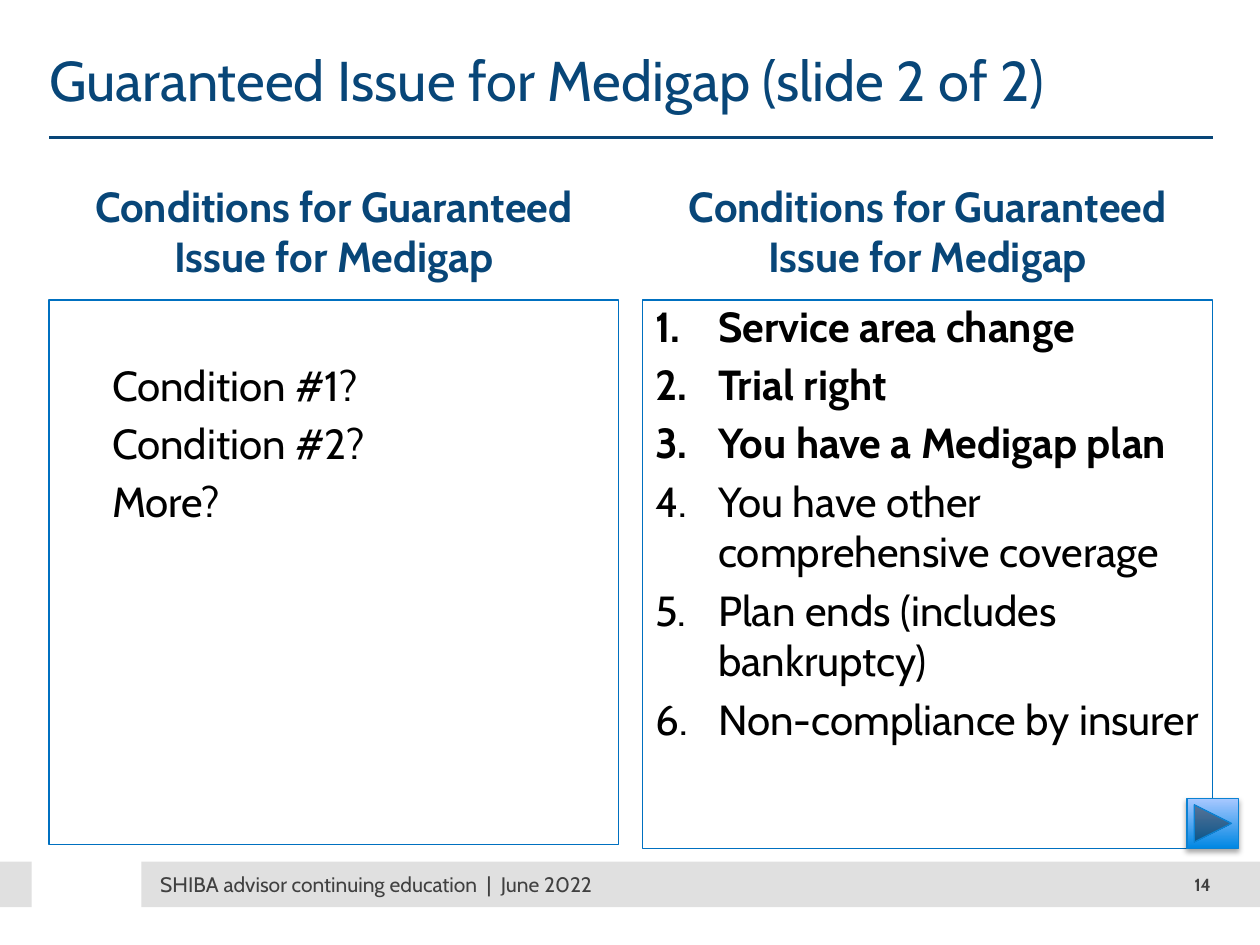
from lxml import etree
from pptx import Presentation
from pptx.dml.color import RGBColor
from pptx.enum.shapes import MSO_CONNECTOR, MSO_SHAPE
from pptx.enum.text import MSO_ANCHOR, PP_ALIGN
from pptx.oxml.ns import qn
from pptx.util import Cm, Pt

RECT = MSO_SHAPE.RECTANGLE
NEXT = MSO_SHAPE.ACTION_BUTTON_FORWARD_OR_NEXT
LINE = MSO_CONNECTOR.STRAIGHT
TOP, MIDDLE = MSO_ANCHOR.TOP, MSO_ANCHOR.MIDDLE
LEFT, CENTER, RIGHT = PP_ALIGN.LEFT, PP_ALIGN.CENTER, PP_ALIGN.RIGHT

FONT = "Cabin"
NAVY, BLUE, BLACK, GREY, PALE = "084678", "0070C0", "000000", "404040", "E0E0E0"
EDGE, GAP = 0.99, 4.6  # side margin in cm, paragraph gap in points
INDENT = Cm(1.27)


def color(code):
    return RGBColor.from_string(code)


def style(para, size, code, bold=False, align=LEFT):
    para.alignment = align
    font = para.font
    font.name, font.size, font.bold = FONT, Pt(size), bold
    font.color.rgb = color(code)


def add_box(slide, x, y, w, h, kind=RECT):
    shape = slide.shapes.add_shape(kind, Cm(x), Cm(y), Cm(w), Cm(h))
    shape.shadow.inherit = False
    return shape


def set_frame(shape, left=0, top=0, anchor=TOP):
    frame = shape.text_frame
    frame.word_wrap = True
    frame.vertical_anchor = anchor
    frame.margin_left, frame.margin_top = Cm(left), Cm(top)
    frame.margin_right = frame.margin_bottom = 0
    return frame


def add_label(slide, x, y, w, h, text, size, code, bold=False, align=LEFT, anchor=TOP):
    label = slide.shapes.add_textbox(Cm(x), Cm(y), Cm(w), Cm(h))
    para = set_frame(label, anchor=anchor).paragraphs[0]
    para.text = text
    style(para, size, code, bold, align)


def indent(para, numbered):
    props = para._p.get_or_add_pPr()
    props.set("marL", str(INDENT))
    props.set("indent", str(-INDENT if numbered else 0))
    if numbered:
        etree.SubElement(props, qn("a:buFont"), typeface="+mj-lt")
        etree.SubElement(props, qn("a:buAutoNum"), type="arabicPeriod")
    else:
        etree.SubElement(props, qn("a:buNone"))


def add_header(slide, x, y, w, h, text):
    add_label(slide, x, y, w, h, text, 32, NAVY)
    rule = slide.shapes.add_connector(LINE, Cm(x), Cm(y + h), Cm(x + w), Cm(y + h))
    rule.line.color.rgb = color(NAVY)
    rule.line.width = Pt(2)
    etree.SubElement(rule._element.spPr, qn("a:effectLst"))


def add_panel(slide, x, y, w, h, head, items, numbered=False, bolds=0, left=0, top=0):
    """Heading over a framed list; the first `bolds` items are bold."""
    body = 2.42  # distance from heading to frame
    add_label(slide, x, y, w, body, head, 24, NAVY, True, CENTER)
    box = add_box(slide, x, y + body, w, h - body)
    box.fill.background()
    box.line.color.rgb = color(BLUE)
    box.line.width = Pt(0.75)
    frame = set_frame(box, left, top)
    for i, item in enumerate(items):
        para = frame.add_paragraph() if i else frame.paragraphs[0]
        para.text = item
        indent(para, numbered)
        if i:
            para.space_before = Pt(GAP)
        style(para, 24, BLACK, i < bolds)


def add_button(slide, x, y, w, h):
    button = add_box(slide, x, y, w, h, NEXT)
    button.fill.gradient()
    button.fill.gradient_angle = 90
    for stop, code in zip(button.fill.gradient_stops, ("0087E3", "A8C8FF")):
        stop.color.rgb = color(code)
    button.line.color.rgb = color("0B82D3")
    button.line.width = Pt(0.75)
    # Soft shadow below
    effects = button._element.spPr.find(qn("a:effectLst"))
    shadow = etree.SubElement(
        effects, qn("a:outerShdw"), blurRad=str(Pt(3.1)), dist=str(Pt(1.8)),
        dir="5400000", rotWithShape="0")
    tint = etree.SubElement(shadow, qn("a:srgbClr"), val=BLACK)
    etree.SubElement(tint, qn("a:alpha"), val="35000")


def add_footer(slide, y, w, h, text, number):
    start = 2.85
    for x, wide in ((start, w - start), (0, 0.64)):
        band = add_box(slide, x, y, wide, h)
        band.fill.solid()
        band.fill.fore_color.rgb = color(PALE)
        band.line.fill.background()
    add_label(slide, start + 0.38, y, 12.7, h, text, 12, GREY, anchor=MIDDLE)
    add_label(slide, w - EDGE - 1.78, y, 1.78, h, number, 10, GREY, True, RIGHT, MIDDLE)


def main():
    deck = Presentation()
    deck.slide_width, deck.slide_height = Cm(25.4), Cm(19.05)
    slide = deck.slides.add_slide(deck.slide_layouts[6])

    add_footer(slide, 17.37, 25.4, 0.92,
               "SHIBA advisor continuing education  |  June 2022", "14")
    add_header(slide, EDGE, 0.91, 23.47, 1.86,
               "Guaranteed Issue for Medigap (slide 2 of 2)")

    # Question on the left, answer on the right
    head = "Conditions for Guaranteed Issue for Medigap"
    add_panel(slide, EDGE, 3.63, 11.48, 13.39, head,
              ["Condition #1?", "Condition #2?", "More?"], top=1.19)
    add_panel(slide, 12.96, 3.63, 11.48, 13.47, head,
              ["Service area change", "Trial right", "You have a Medigap plan",
               "You have other comprehensive coverage",
               "Plan ends (includes bankruptcy)", "Non-compliance by insurer"],
              numbered=True, bolds=3, left=0.25)
    add_button(slide, 23.93, 16.1, 1.04, 1)

    deck.save("out.pptx")


if __name__ == "__main__":
    main()
